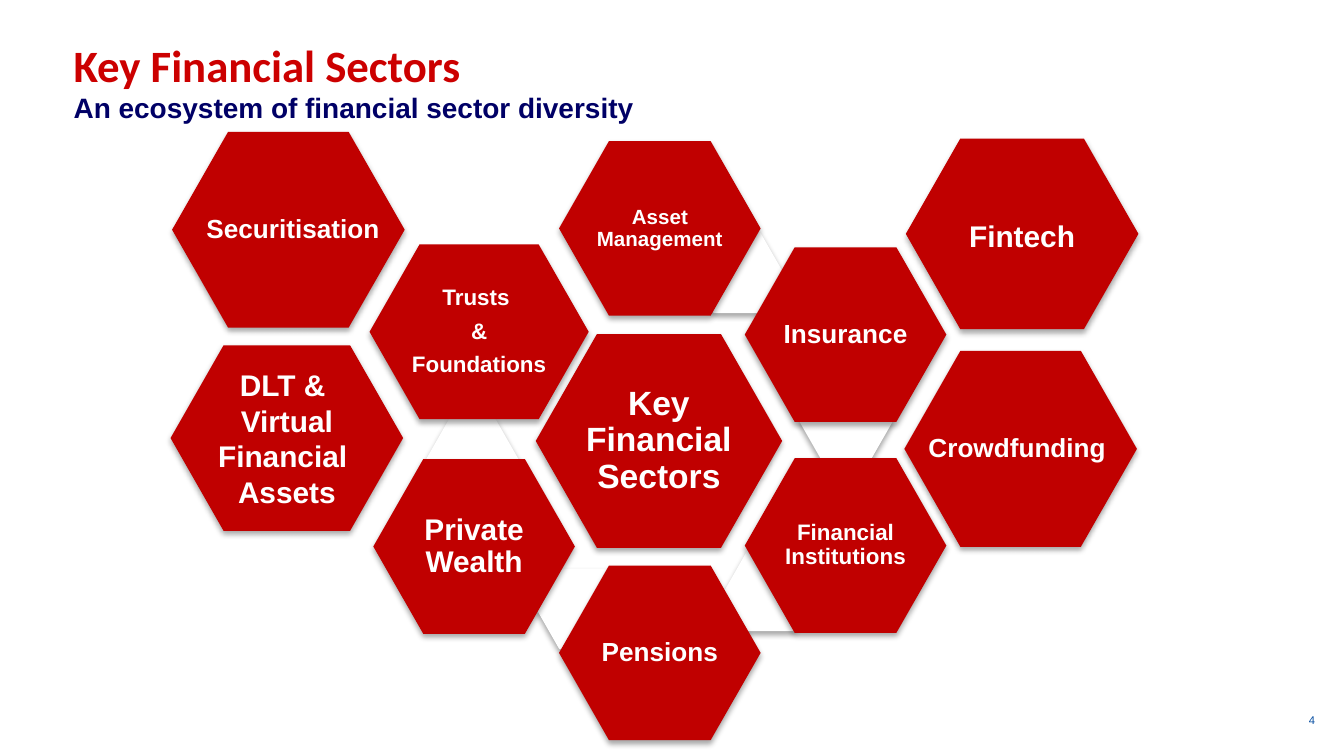
import pptx
import pptx.dml.color
import pptx.enum.shapes
import pptx.enum.text
import pptx.oxml
import pptx.oxml.ns
import pptx.util

Pt = pptx.util.Pt
ALIGN = pptx.enum.text.PP_ALIGN
ANCHOR = pptx.enum.text.MSO_ANCHOR

RED = "C00000"
WHITE = "FFFFFF"
SMALL = (108, 93.6)
BRIDGE = (49.7, 43.2)
INNER, OUTER = 0.67, 0.96  # label width as a share of the hexagon width

SHADOW = (
    f'<a:effectLst {pptx.oxml.ns.nsdecls("a")}>'
    '<a:outerShdw blurRad="39370" dist="22860" dir="5400000" rotWithShape="0">'
    '<a:srgbClr val="000000"><a:alpha val="35000"/></a:srgbClr>'
    "</a:outerShdw></a:effectLst>"
)

# White hexagons behind the sectors: left, top
BRIDGES = [(279, 54.6), (337.4, 134.5), (297, 225), (196.3, 234.6), (137.2, 154.6)]

# left, top, (width, height), label, font size, label width share, format
SECTORS = [
    (196, 109, (132, 114.5), "Key Financial Sectors", 18, INNER, {}),
    (208.5, 5.6, SMALL, "Asset Management", 11, INNER, {}),
    (308, 62.5, SMALL, "Insurance ", 14, INNER, {}),
    (308, 175.5, SMALL, "Financial Institutions", 12, INNER, {}),
    (208.5, 233, SMALL, "Pensions", 14, INNER, {}),
    (109, 176, SMALL, "Private Wealth", 16, INNER, {}),
    (107, 61, (117.4, 93.6), "Trusts \n&\nFoundations", 12, INNER, {}),
    (393.5, 118, (124.6, 105), "Crowdfunding", 14, OUTER, {"dx": -1.8}),
    (394.3, 4.2, (124.6, 102.2), "Fintech", 16, OUTER, {"dy": 2}),
    (0.4, 115, (124.6, 99.4), "DLT & \vVirtual Financial \vAssets", 16, OUTER,
     {"spacing": 1}),
    (1.2, 0.6, (124.6, 105), "Securitisation", 14, OUTER, {"dx": 2.5}),
]


def color(value):
    return pptx.dml.color.RGBColor.from_string(value)


def add_frame(slide, box, inset=(1.5, 1.5), anchor=ANCHOR.MIDDLE):
    tf = slide.shapes.add_textbox(*map(Pt, box)).text_frame
    tf.word_wrap = True
    tf.vertical_anchor = anchor
    tf.margin_left = tf.margin_right = Pt(inset[0])
    tf.margin_top = tf.margin_bottom = Pt(inset[1])
    return tf


def write(tf, text, size, ink, font="Arial", bold=True, align=ALIGN.LEFT,
          spacing=1, after=0):
    """Add one paragraph per line of text; a vertical tab breaks a line."""
    for line in text.split("\n"):
        p = tf.add_paragraph() if tf.paragraphs[0].runs else tf.paragraphs[0]
        p.text = line
        p.alignment = align
        p.line_spacing = spacing
        p.space_after = Pt(after)
        for r in p.runs:
            r.font.size = Pt(size)
            r.font.name = font
            r.font.bold = bold
            r.font.color.rgb = color(ink)


def add_hexagon(slide, box, fill):
    kind = pptx.enum.shapes.MSO_SHAPE.HEXAGON
    sp = slide.shapes.add_shape(kind, *map(Pt, box))
    sp.adjustments[0] = 0.286
    sp.fill.solid()
    sp.fill.fore_color.rgb = color(fill)
    sp.line.fill.background()
    sp._element.spPr.append(pptx.oxml.parse_xml(SHADOW))


def add_sector(slide, box, label, size, share, dx=0, dy=0, spacing=0.9):
    """Draw a red hexagon with its label centred, moved by dx and dy."""
    add_hexagon(slide, box, RED)
    x, y, w, h = box
    label_w, label_h = w * share, h * INNER
    tf = add_frame(slide, (x + (w - label_w) / 2 + dx, y + (h - label_h) / 2 + dy,
                           label_w, label_h))
    write(tf, label, size, WHITE, align=ALIGN.CENTER, spacing=spacing,
          after=0.4 * size)


def add_honeycomb(slide, left, top):
    for x, y in BRIDGES:
        add_hexagon(slide, (left + x, top + y, *BRIDGE), WHITE)
    for x, y, extent, label, size, share, fmt in SECTORS:
        add_sector(slide, (left + x, top + y, *extent), label, size, share, **fmt)


def add_title(slide, box):
    tf = add_frame(slide, box, inset=(5.4, 2.7), anchor=ANCHOR.TOP)
    write(tf, "Key Financial Sectors", 24, "CC0000", font="Calibri")
    write(tf, "An ecosystem of financial sector diversity", 15, "000066")


def add_slide_number(slide, box):
    tf = add_frame(slide, box, inset=(7.2, 3.6))
    write(tf, "4", 6, "074EA2", bold=False, align=ALIGN.RIGHT)


def main():
    prs = pptx.Presentation()
    prs.slide_width, prs.slide_height = Pt(720), Pt(405)
    slide = prs.slides.add_slide(prs.slide_layouts[6])
    add_honeycomb(slide, 91, 70)
    add_title(slide, (34, 17.3, 600, 67.7))
    add_slide_number(slide, (543.6, 375, 168, 21.6))
    prs.save("out.pptx")


if __name__ == "__main__":
    main()
